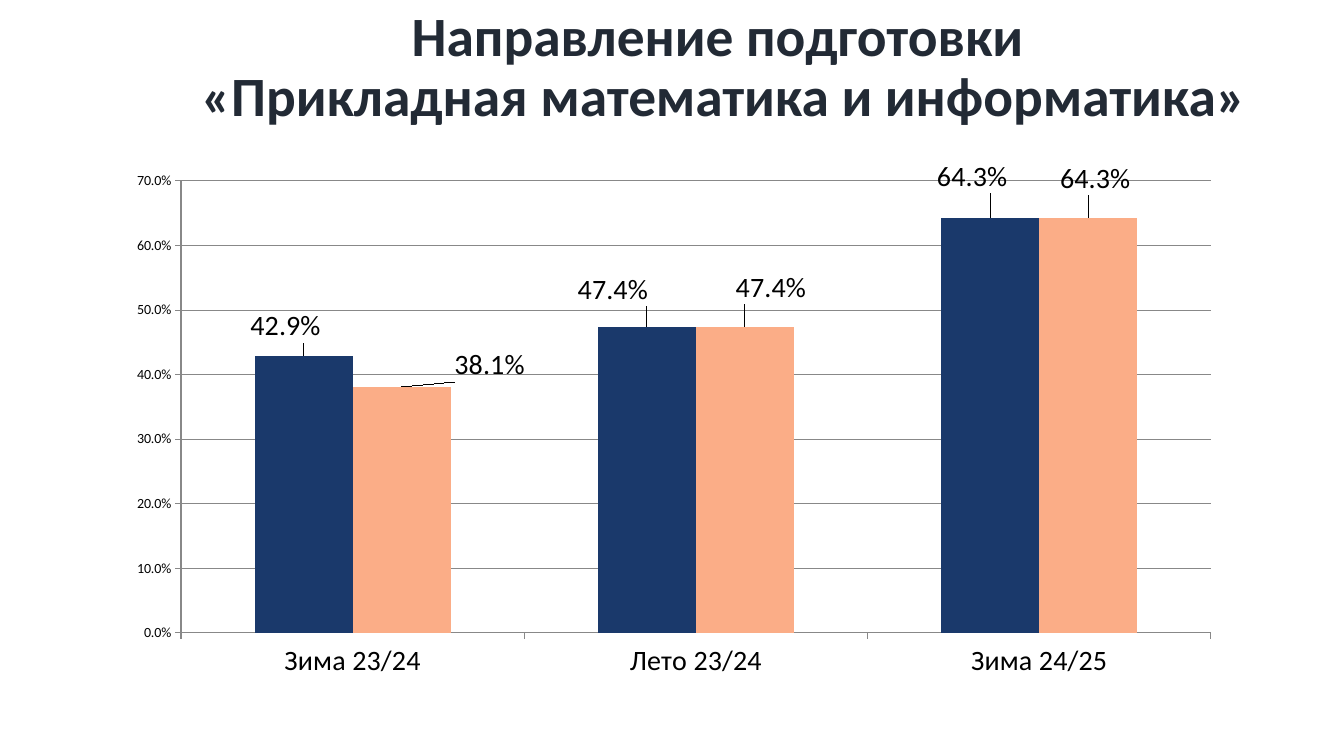
from dataclasses import dataclass

from lxml import etree
from pptx import Presentation
from pptx import util as u
from pptx.chart import data as chart_data
from pptx.dml import color
from pptx.enum import chart as ch
from pptx.enum import text
from pptx.oxml import ns

PX = 914400 / 100.8


@dataclass(frozen=True)
class Theme:
    font: str = "Calibri"
    title: str = "222A35"
    ink: str = "000000"
    grid: str = "888888"
    bars: tuple = ("1A396B", "FBAD87")
    title_size: float = 39.6
    label_size: int = 20
    axis_size: int = 10
    line_width: float = 0.75


THEME = Theme()
CHART = (116, 159, 1118, 529)
PLOT = (65, 22, 1030, 452)
PERCENT = "0.0%"
TITLE_LINES = ("Направление подготовки ", "«Прикладная математика и информатика»")
SESSIONS = ("Зима 23/24", "Лето 23/24", "Зима 24/25")
SERIES = (
    ("Series 1", (0.429, 0.474, 0.643), ((-18, -9), (-34, -16), (-18, -20))),
    ("Series 2", (0.381, 0.474, 0.643), ((88, -1), (26, -18), (7, -18))),
)


def px(*lengths):
    return [u.Emu(round(length * PX)) for length in lengths]


def rgb(value):
    return color.RGBColor.from_string(value)


def style_font(font, size, ink=THEME.ink, bold=False):
    font.name = THEME.font
    font.size = u.Pt(size)
    font.bold = bold
    font.color.rgb = rgb(ink)


def style_line(line):
    line.color.rgb = rgb(THEME.grid)
    line.width = u.Pt(THEME.line_width)


def add_title(page, lines, frame):
    box = page.shapes.add_textbox(*px(*frame))
    body = box.text_frame
    body.word_wrap = True
    body.vertical_anchor = text.MSO_ANCHOR.MIDDLE
    body.margin_top = body.margin_bottom = 0
    para = body.paragraphs[0]
    para.alignment = text.PP_ALIGN.CENTER
    para.line_spacing = 0.9
    for index, line in enumerate(lines):
        if index:
            para.add_line_break()
        span = para.add_run()
        span.text = line
        style_font(span.font, THEME.title_size, THEME.title, bold=True)


def manual_layout(**settings):
    layout = etree.Element(ns.qn("c:layout"))
    manual = etree.SubElement(layout, ns.qn("c:manualLayout"))
    for name, value in settings.items():
        etree.SubElement(manual, ns.qn(f"c:{name}")).set("val", str(value))
    return layout


def place_plot(chart):
    x, y, width, height = PLOT
    area = chart.element.xpath(".//c:plotArea")[0]
    for old in area.xpath("./c:layout"):
        area.remove(old)
    area.insert(0, manual_layout(
        layoutTarget="inner", xMode="edge", yMode="edge",
        x=x / CHART[2], y=y / CHART[3],
        w=width / CHART[2], h=height / CHART[3]))


def style_axis(axis, size):
    style_font(axis.tick_labels.font, size)
    style_line(axis.format.line)
    axis.major_tick_mark = ch.XL_TICK_MARK.OUTSIDE
    axis.minor_tick_mark = ch.XL_TICK_MARK.NONE


def label_points(chart, series, offsets):
    for index in range(len(offsets)):
        label = series.points[index].data_label
        style_font(label.font, THEME.label_size)
        label.position = ch.XL_LABEL_POSITION.OUTSIDE_END
    entries = chart.element.xpath(f".//c:ser[c:idx/@val='{series.index}']//c:dLbl") \
        if hasattr(series, "index") else series._element.xpath(".//c:dLbl")
    for entry, (dx, dy) in zip(entries, offsets):
        entry.insert(1, manual_layout(x=dx / CHART[2], y=dy / CHART[3]))
        number = etree.Element(ns.qn("c:numFmt"), formatCode=PERCENT, sourceLinked="0")
        entry.insert(2, number)
    labels = series.data_labels
    labels.show_value = True
    labels.number_format = PERCENT
    labels.number_format_is_linked = False
    style_font(labels.font, THEME.label_size)


def add_column_chart(page):
    data = chart_data.CategoryChartData(number_format=PERCENT)
    data.categories = SESSIONS
    for name, values, _ in SERIES:
        data.add_series(name, values)
    chart = page.shapes.add_chart(
        ch.XL_CHART_TYPE.COLUMN_CLUSTERED, *px(*CHART), data).chart
    chart.has_title = False
    chart.has_legend = False
    style_font(chart.font, THEME.axis_size)
    place_plot(chart)
    style_axis(chart.category_axis, THEME.label_size)
    values = chart.value_axis
    style_axis(values, THEME.axis_size)
    values.minimum_scale, values.maximum_scale, values.major_unit = 0, 0.7, 0.1
    values.tick_labels.number_format = PERCENT
    values.tick_labels.number_format_is_linked = False
    values.has_major_gridlines = True
    style_line(values.major_gridlines.format.line)
    plot = chart.plots[0]
    plot.gap_width, plot.overlap = 150, 0
    plot.vary_by_categories = False
    for series, fill, (_, _, offsets) in zip(plot.series, THEME.bars, SERIES):
        series.format.fill.solid()
        series.format.fill.fore_color.rgb = rgb(fill)
        series.invert_if_negative = False
        label_points(chart, series, offsets)


def main():
    deck = Presentation()
    deck.slide_width, deck.slide_height = px(1344, 756)
    page = deck.slides.add_slide(deck.slide_layouts[6])
    add_title(page, TITLE_LINES, (160, 8, 1128, 121))
    add_column_chart(page)
    deck.save("out.pptx")


if __name__ == "__main__":
    main()
